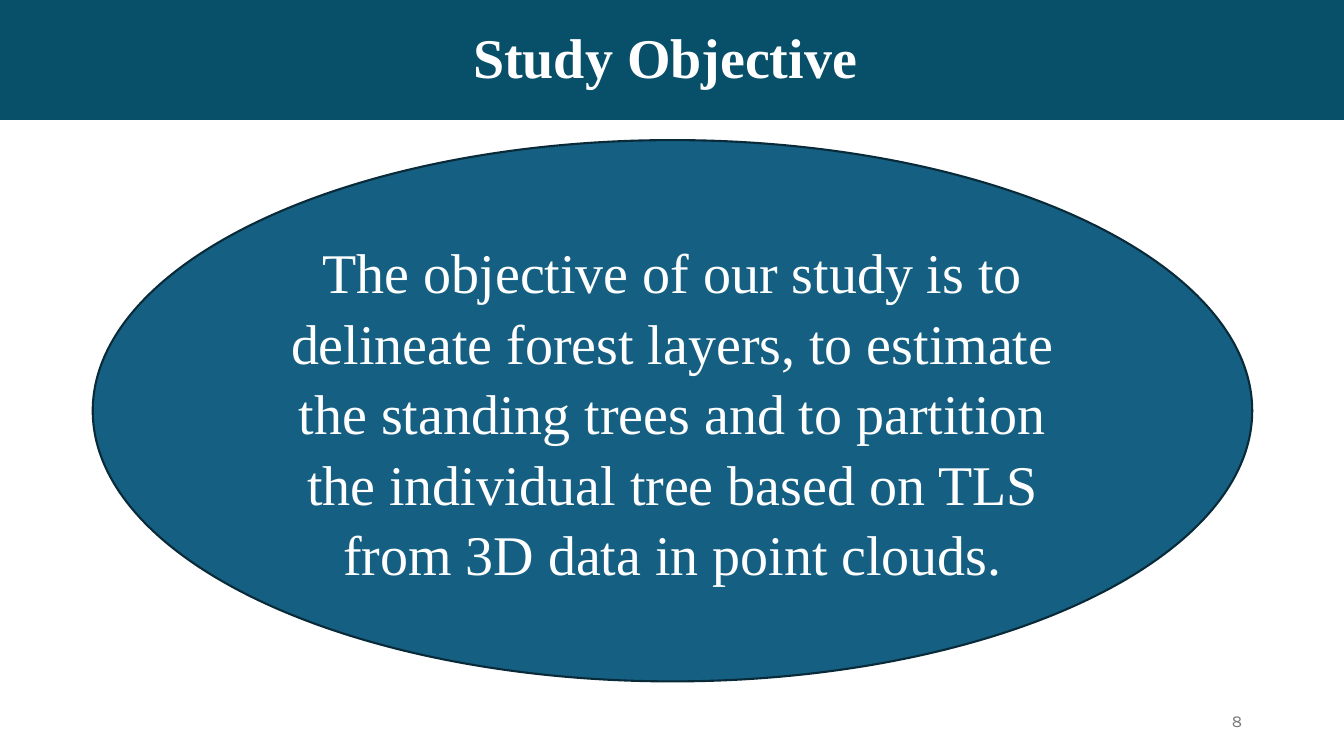
"""Build the Study Objective slide."""
from dataclasses import dataclass

from pptx import Presentation
from pptx import util as u
from pptx.dml.color import RGBColor
from pptx.enum import shapes, text


@dataclass(frozen=True)
class Theme:
    white: str = "FFFFFF"
    banner: str = "084F6A"
    oval: str = "156082"
    outline: str = "092A39"
    muted: str = "797979"
    serif: str = "Times New Roman"
    sans: str = "Karla"
    large: int = 40
    small: int = 12


class Deck:
    def __init__(self, theme):
        self.theme = theme
        self.prs = Presentation()
        self.prs.slide_width = u.Inches(13.33)
        self.prs.slide_height = u.Inches(7.5)
        self.s = self.prs.slides.add_slide(self.prs.slide_layouts[5])

    def set_text(self, sp, words, size, font, color, align, spacing=1.0, bold=False):
        tf = sp.text_frame
        tf.text = words
        tf.word_wrap = True
        tf.auto_size = text.MSO_AUTO_SIZE.NONE
        tf.vertical_anchor = text.MSO_ANCHOR.MIDDLE
        p = tf.paragraphs[0]
        p.alignment = align
        p.line_spacing = spacing
        r = p.runs[0]
        r.font.size = u.Pt(size)
        r.font.name = font
        r.font.bold = bold
        r.font.color.rgb = RGBColor.from_string(color)

    def fill(self, sp, color):
        sp.fill.solid()
        sp.fill.fore_color.rgb = RGBColor.from_string(color)

    def title(self, words):
        t = self.theme
        sp = self.s.shapes.title
        sp.left, sp.top = u.Inches(0), u.Inches(0)
        sp.width, sp.height = self.prs.slide_width, u.Inches(1.19)
        self.fill(sp, t.banner)
        self.set_text(sp, words, t.large, t.serif, t.white,
                      text.PP_ALIGN.CENTER, spacing=0.9, bold=True)

    def page_number(self, number):
        t = self.theme
        sp = self.s.shapes.add_textbox(
            u.Inches(9.42), u.Inches(6.95), u.Inches(3), u.Inches(0.4))
        self.set_text(sp, str(number), t.small, t.sans, t.muted, text.PP_ALIGN.RIGHT)

    def oval(self, words):
        t = self.theme
        sp = self.s.shapes.add_shape(
            shapes.MSO_SHAPE.OVAL,
            u.Inches(0.92), u.Inches(1.39), u.Inches(11.5), u.Inches(5.37))
        sp.shadow.inherit = False
        self.fill(sp, t.oval)
        sp.line.color.rgb = RGBColor.from_string(t.outline)
        sp.line.width = u.Pt(1.5)
        self.set_text(sp, words, t.large, t.serif, t.white,
                      text.PP_ALIGN.CENTER, spacing=1.05)


def main():
    deck = Deck(Theme())
    deck.title("Study Objective ")
    deck.page_number(8)
    deck.oval("The objective of our study is to delineate forest layers, "
              "to estimate the standing trees and to partition the individual "
              "tree based on TLS from 3D data in point clouds.")
    deck.prs.save("out.pptx")


if __name__ == "__main__":
    main()
